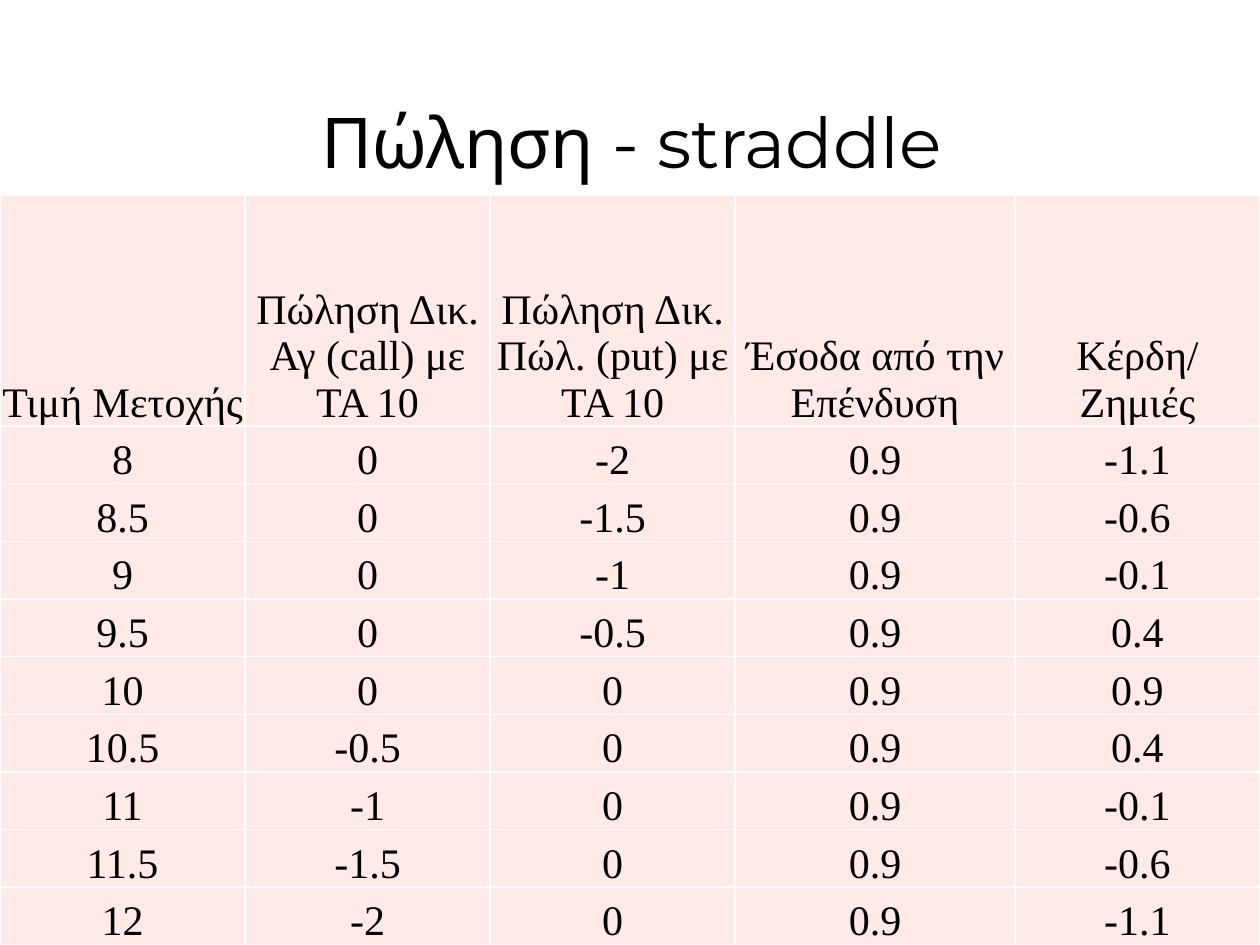
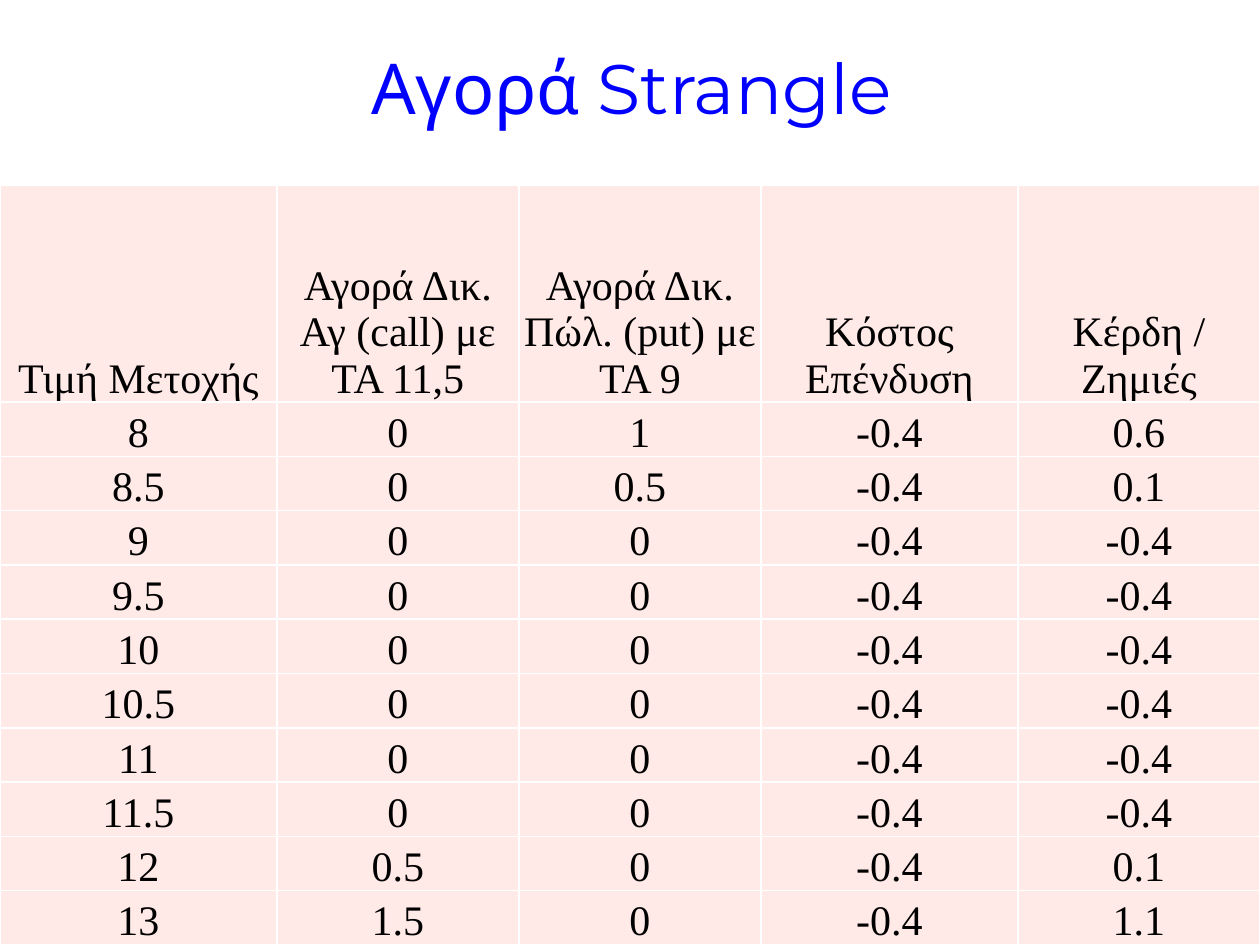
from dataclasses import dataclass

from lxml.etree import SubElement
from pptx import Presentation
from pptx.dml.color import RGBColor
from pptx.enum.text import MSO_ANCHOR, PP_ALIGN
from pptx.oxml.ns import qn
from pptx.util import Cm, Pt

# Shared look
BLACK = RGBColor(0x00, 0x00, 0x00)
BLUE = RGBColor(0x00, 0x00, 0xFF)
PINK = RGBColor(0xFF, 0xEA, 0xE7)
WHITE = RGBColor(0xFF, 0xFF, 0xFF)
TITLE_FONT, TITLE_SIZE = "Montserrat", Pt(40)
TABLE_FONT, TABLE_SIZE = "Times New Roman", Pt(24)
SLIDE_W, SLIDE_H = Cm(25.4), Cm(19.05)
HEADER_ROWS = 4  # the header is as tall as four value rows


@dataclass
class Strategy:
    """An option strategy: its slide title, table layout and payoff terms."""
    title: str
    title_color: RGBColor
    title_height: float
    table_top: float
    col_widths: list[float]
    headers: list[str]
    prices: list[float]
    side: int  # 1 buys the options, -1 sells them
    call_strike: float
    put_strike: float
    premium: float

    def rows(self) -> list[list[str]]:
        table = [self.headers]
        for price in self.prices:
            call = self.side * max(price - self.call_strike, 0)
            put = self.side * max(self.put_strike - price, 0)
            profit = call + put + self.premium
            values = (price, call, put, self.premium, profit)
            # Adding 0.0 turns a negative zero into a plain one
            table.append([f"{round(v, 1) + 0.0:g}" for v in values])
        return table


STRATEGIES = [
    Strategy(
        "Πώληση - straddle", BLACK, 3.81, 3.94,
        [4.94, 4.94, 4.94, 5.64, 4.94],
        ["Τιμή Μετοχής", "Πώληση Δικ. Αγ (call) με ΤΑ 10",
         "Πώληση Δικ. Πώλ. (put) με ΤΑ 10", "Έσοδα από την Επένδυση",
         "Κέρδη/ Ζημιές"],
        [8, 8.5, 9, 9.5, 10, 10.5, 11, 11.5, 12],
        side=-1, call_strike=10, put_strike=10, premium=0.9),
    Strategy(
        "Αγορά Strangle", BLUE, 2.72, 3.73,
        [5.58, 4.88, 4.88, 5.18, 4.88],
        ["Τιμή Μετοχής", "Αγορά Δικ. Αγ (call) με ΤΑ 11,5",
         "Αγορά Δικ. Πώλ. (put) με ΤΑ 9", "Κόστος Επένδυση",
         "Κέρδη / Ζημιές"],
        [8, 8.5, 9, 9.5, 10, 10.5, 11, 11.5, 12, 13],
        side=1, call_strike=11.5, put_strike=9, premium=-0.4),
]


def add_text(tf, text: str, font: str, size: Pt, color: RGBColor) -> None:
    tf.word_wrap = True
    p = tf.paragraphs[0]
    p.alignment = PP_ALIGN.CENTER
    r = p.add_run()
    r.text = text
    r.font.name, r.font.size = font, size
    r.font.color.rgb = color


def add_title(slide, strategy: Strategy) -> None:
    sp = slide.shapes.add_textbox(Cm(1.12), 0, Cm(23.22), Cm(strategy.title_height))
    sp.text_frame.vertical_anchor = MSO_ANCHOR.BOTTOM
    add_text(sp.text_frame, strategy.title, TITLE_FONT, TITLE_SIZE, strategy.title_color)


def add_borders(cell) -> None:
    tcPr = cell._tc.get_or_add_tcPr()
    for side in "LRTB":
        ln = SubElement(tcPr, qn(f"a:ln{side}"), w=str(Pt(1)))
        fill = SubElement(ln, qn("a:solidFill"))
        SubElement(fill, qn("a:srgbClr"), val=str(WHITE))


def fill_cell(cell, text: str) -> None:
    add_borders(cell)
    cell.fill.solid()
    cell.fill.fore_color.rgb = PINK
    cell.vertical_anchor = MSO_ANCHOR.BOTTOM
    cell.margin_left = cell.margin_right = cell.margin_top = Cm(0.02)
    cell.margin_bottom = 0
    add_text(cell.text_frame, text, TABLE_FONT, TABLE_SIZE, BLACK)


def add_payoff_table(slide, strategy: Strategy) -> None:
    rows = strategy.rows()
    top = Cm(strategy.table_top)
    height = SLIDE_H - top
    table = slide.shapes.add_table(
        len(rows), len(strategy.headers), 0, top, SLIDE_W, height).table
    table.first_row = table.horz_banding = False
    for col, width in zip(table.columns, strategy.col_widths):
        col.width = Cm(width)

    # The table runs down to the foot of the slide
    row_height = height // (len(strategy.prices) + HEADER_ROWS)
    for i, texts in enumerate(rows):
        table.rows[i].height = row_height * (1 if i else HEADER_ROWS)
        for j, text in enumerate(texts):
            fill_cell(table.cell(i, j), text)


def main() -> None:
    prs = Presentation()
    prs.slide_width, prs.slide_height = SLIDE_W, SLIDE_H
    for strategy in STRATEGIES:
        slide = prs.slides.add_slide(prs.slide_layouts[6])
        add_title(slide, strategy)
        add_payoff_table(slide, strategy)
    prs.save("out.pptx")


if __name__ == "__main__":
    main()
